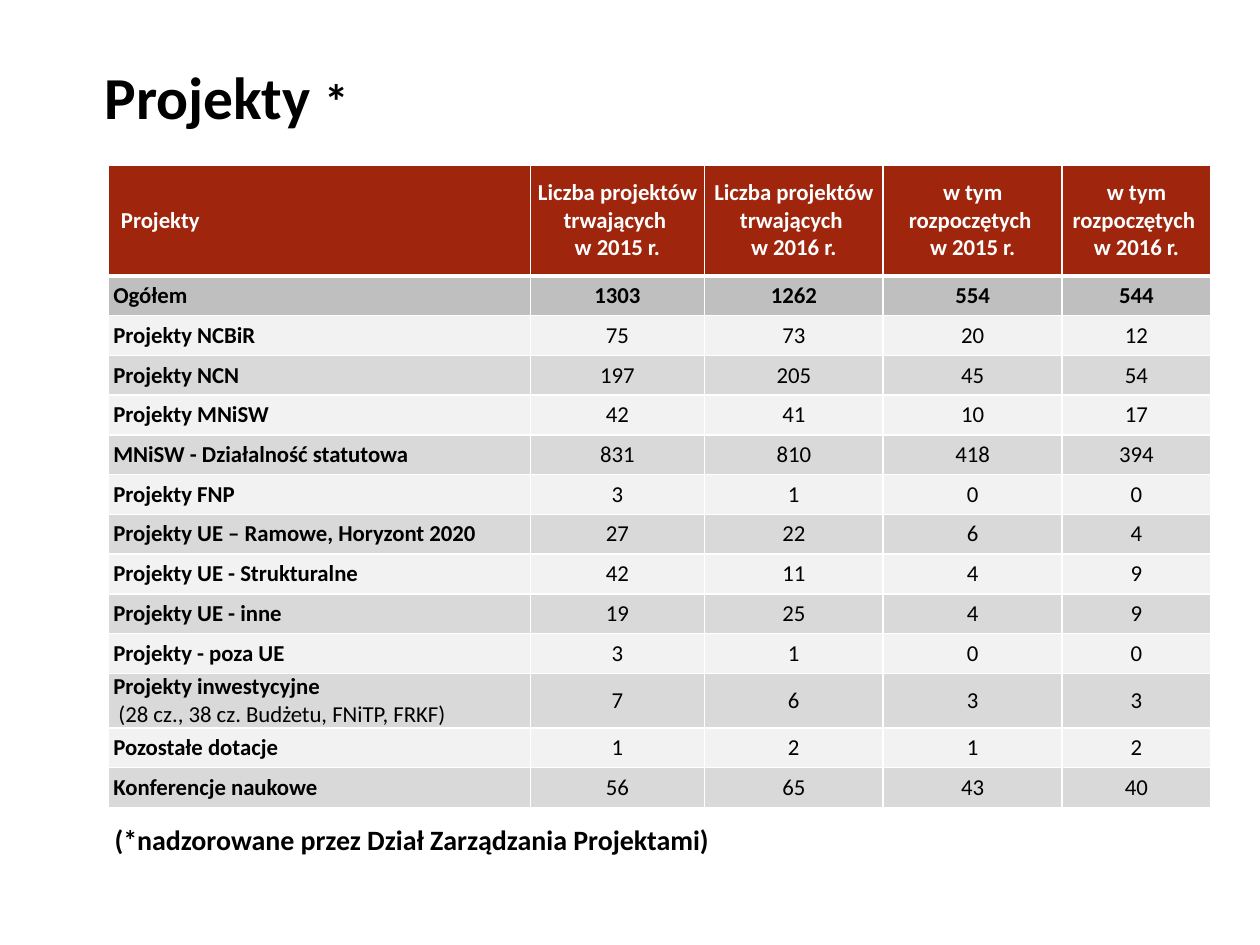
from lxml import etree
from pptx import Presentation
from pptx.dml.color import RGBColor
from pptx.enum import text as t
from pptx.oxml import ns
from pptx.util import Inches, Pt

HEAD = ["Projekty"] + [
    f"{what} \vw {year} r."
    for what in ("Liczba projektów trwających", "w tym rozpoczętych")
    for year in (2015, 2016)
]
ROWS = [
    ("Ogółem", 1303, 1262, 554, 544),
    ("Projekty NCBiR", 75, 73, 20, 12),
    ("Projekty NCN", 197, 205, 45, 54),
    ("Projekty MNiSW", 42, 41, 10, 17),
    ("MNiSW - Działalność statutowa", 831, 810, 418, 394),
    ("Projekty FNP", 3, 1, 0, 0),
    ("Projekty UE – Ramowe, Horyzont 2020", 27, 22, 6, 4),
    ("Projekty UE - Strukturalne", 42, 11, 4, 9),
    ("Projekty UE - inne", 19, 25, 4, 9),
    ("Projekty - poza UE", 3, 1, 0, 0),
    ("Projekty inwestycyjne\v (28 cz., 38 cz. Budżetu, FNiTP, FRKF)", 7, 6, 3, 3),
    ("Pozostałe dotacje", 1, 2, 1, 2),
    ("Konferencje naukowe", 56, 65, 43, 40),
]
COLS = (3.35, 1.38, 1.42, 1.42, 1.18)


def color(code):
    return RGBColor.from_string(code)


class Deck:
    face = "Calibri"
    ink, white = "000000", "FFFFFF"
    red, total = "9F250D", "BFBFBF"
    bands = ("F2F2F2", "D9D9D9")

    def __init__(self, slide):
        self.slide = slide

    def style(self, run, size, bold=True, ink=ink):
        font = run.font
        font.name, font.size, font.bold = self.face, Pt(size), bold
        font.color.rgb = color(ink)

    def label(self, left, top, width, height, *parts):
        """Add a one-line text box from (text, size) parts."""
        box = self.slide.shapes.add_textbox(
            Inches(left), Inches(top), Inches(width), Inches(height))
        frame = box.text_frame
        frame.word_wrap = True
        frame.vertical_anchor = t.MSO_ANCHOR.MIDDLE
        frame.margin_left = 0
        for words, size in parts:
            run = frame.paragraphs[0].add_run()
            run.text = words
            self.style(run, size)

    def border(self, cell, **widths):
        """Draw white cell edges, keyed L, R, T, B, in points."""
        props = cell._tc.get_or_add_tcPr()
        for at, side in enumerate("LRTB"):
            line = etree.Element(ns.qn(f"a:ln{side}"), w=str(Pt(widths.get(side, 1))))
            fill = etree.SubElement(line, ns.qn("a:solidFill"))
            etree.SubElement(fill, ns.qn("a:srgbClr"), val=self.white)
            props.insert(at, line)

    def cell(self, cell, words, fill, ink, bold, center):
        cell.fill.solid()
        cell.fill.fore_color.rgb = color(fill)
        cell.vertical_anchor = t.MSO_ANCHOR.MIDDLE
        cell.margin_left = cell.margin_right = Inches(0.04)
        cell.margin_top = cell.margin_bottom = 0
        cell.text_frame.text = str(words)
        para = cell.text_frame.paragraphs[0]
        para.alignment = t.PP_ALIGN.CENTER if center else t.PP_ALIGN.LEFT
        for run in para.runs:
            note = run.text.startswith(" (")
            self.style(run, 13, bold and not note, ink)

    def table(self, left, top, cols, head, rows):
        grid = [head, *rows]
        tall, low = Inches(0.88), int(Inches(4.1) / len(rows))
        table = self.slide.shapes.add_table(
            len(grid), len(cols), Inches(left), Inches(top),
            Inches(sum(cols)), tall + low * len(rows)).table
        for col, width in zip(table.columns, cols):
            col.width = Inches(width)
        for r, row in enumerate(grid):
            table.rows[r].height = low if r else tall
            fill = (self.red, self.total)[r] if r < 2 else self.bands[r % 2]
            edge = ({"B": 3}, {"T": 3})[r] if r < 2 else {}
            for c, words in enumerate(row):
                cell = table.cell(r, c)
                self.cell(cell, words, fill, self.ink if r else self.white,
                          r < 2 or c == 0, c > 0)
                self.border(cell, **edge)
        table.cell(0, 0).margin_left = Inches(0.1)


def main():
    prs = Presentation()
    prs.slide_width, prs.slide_height = Inches(10), Inches(7.5)
    deck = Deck(prs.slides.add_slide(prs.slide_layouts[6]))
    deck.label(0.83, 0.29, 9.04, 0.94, ("Projekty ", 34), ("*", 28))
    deck.table(0.86, 1.31, COLS, HEAD, ROWS)
    deck.label(0.91, 6.43, 9.04, 0.47,
               ("(*nadzorowane przez Dział Zarządzania Projektami)", 16))
    prs.save("out.pptx")


if __name__ == "__main__":
    main()
